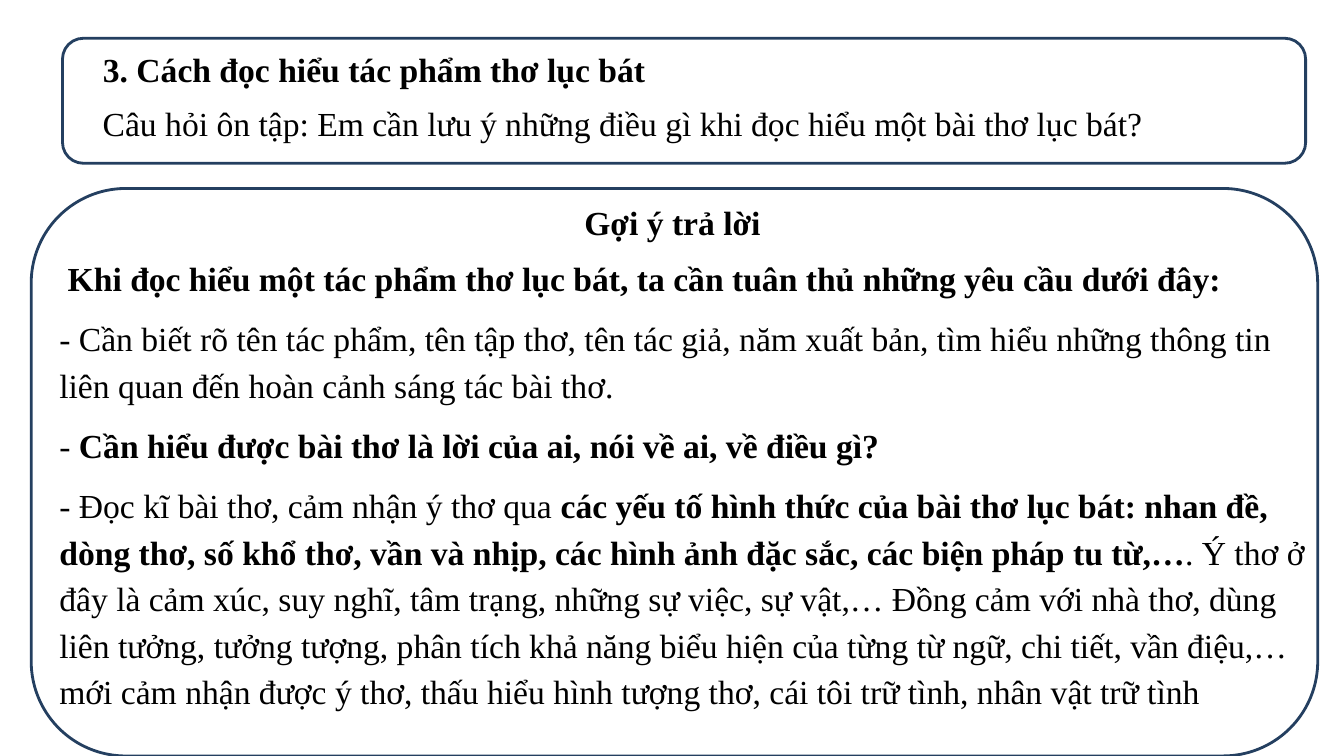
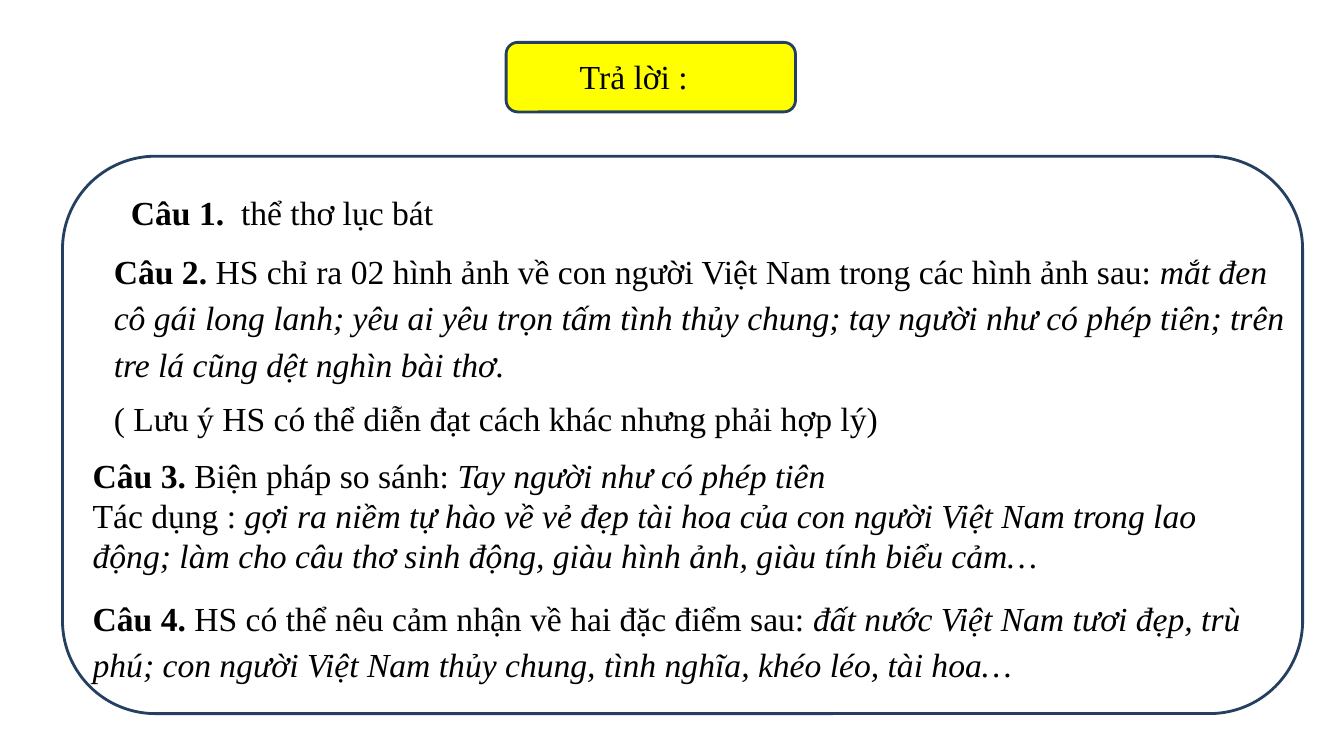
"""Build two review slides on reading six-eight verse."""
from dataclasses import dataclass

from pptx import Presentation
from pptx.dml.color import RGBColor
from pptx.enum.shapes import MSO_SHAPE
from pptx.enum.text import MSO_ANCHOR, MSO_AUTO_SIZE, PP_ALIGN
from pptx.util import Inches, Pt

ROUND = MSO_SHAPE.ROUNDED_RECTANGLE
TOP = MSO_ANCHOR.TOP
GROW = MSO_AUTO_SIZE.SHAPE_TO_FIT_TEXT
LEFT, MID, JUST = PP_ALIGN.LEFT, PP_ALIGN.CENTER, PP_ALIGN.JUSTIFY


@dataclass(frozen=True)
class Theme:
    ink: RGBColor = RGBColor(0, 0, 0)
    edge: RGBColor = RGBColor(0x24, 0x3F, 0x60)
    glow: RGBColor = RGBColor(0xFF, 0xFF, 0)
    face: str = "Times New Roman"
    size: Pt = Pt(24)
    line: Pt = Pt(2)
    wide: float = 1.15
    gap: Pt = Pt(10)


theme = Theme()


def panel(slide, at, fill=None):
    box = slide.shapes.add_shape(ROUND, *map(Inches, at))
    box.shadow.inherit = False
    box.line.color.rgb = theme.edge
    box.line.width = theme.line
    if fill is None:
        box.fill.background()
    else:
        box.fill.solid()
        box.fill.fore_color.rgb = fill


def write(shape, at, paras, align=LEFT, space=1.0, after=Pt(0)):
    shape.left, shape.top, shape.width, shape.height = map(Inches, at)
    frame = shape.text_frame
    frame.word_wrap = True
    frame.auto_size = GROW
    frame.vertical_anchor = TOP
    for num, runs in enumerate(paras):
        para = frame.add_paragraph() if num else frame.paragraphs[0]
        para.alignment = align
        para.line_spacing = space
        para.space_after = after
        font = para.font
        font.name, font.size = theme.face, theme.size
        font.color.rgb = theme.ink
        for style, text in runs:
            run = para.add_run()
            run.text = text
            if style == "b":
                run.font.bold = True
            elif style == "i":
                run.font.italic = True


deck = Presentation()
deck.slide_width, deck.slide_height = Inches(13.33), Inches(7.5)

pages = [
    {
        "panels": [((0.62, 0.38, 12.33, 1.24), None), ((0.31, 1.87, 12.76, 5.63), None)],
        "title": ((0.92, 0.38, 6.66, 0.53),
                  [[("b", "3. Cách đọc hiểu tác phẩm thơ lục bát")]], JUST, theme.wide),
        "texts": [
            ((0.92, 0.91, 11.32, 0.53),
             [[("", "Câu hỏi ôn tập: Em cần lưu ý những điều gì khi đọc hiểu một bài thơ lục bát?")]],
             JUST, theme.wide),
            ((3.33, 1.89, 6.68, 0.53), [[("b", "Gợi ý trả lời")]], MID, theme.wide),
            ((0.49, 2.45, 12.58, 4.66), [
                [("b", " Khi đọc hiểu một tác phẩm thơ lục bát, ta cần tuân thủ những yêu cầu dưới đây:")],
                [("", "- Cần biết rõ tên tác phẩm, tên tập thơ, tên tác giả, năm xuất bản, tìm hiểu "
                      "những thông tin liên quan đến hoàn cảnh sáng tác bài thơ.")],
                [("", "- "), ("b", "Cần hiểu được bài thơ là lời của ai, nói về ai, về điều gì?")],
                [("", "- Đọc kĩ bài thơ, cảm nhận ý thơ qua "),
                 ("b", "các yếu tố hình thức của bài thơ lục bát: nhan đề, dòng thơ, số khổ thơ, "
                       "vần và nhịp, các hình ảnh đặc sắc, các biện pháp tu từ,…"),
                 ("", ". Ý thơ ở đây là cảm xúc, suy nghĩ, tâm trạng, những sự việc, sự vật,… "
                      "Đồng cảm với nhà thơ, dùng liên tưởng, tưởng tượng, phân tích khả năng biểu hiện "
                      "của từng từ ngữ, chi tiết, vần điệu,… mới cảm nhận được ý thơ, thấu hiểu "
                      "hình tượng thơ, cái tôi trữ tình, nhân vật trữ tình")],
            ], LEFT, theme.wide, theme.gap),
        ],
    },
    {
        "panels": [((5.02, 0.42, 2.87, 0.69), theme.glow), ((0.62, 1.55, 12.3, 5.53), None)],
        "title": ((5.65, 0.5, 2.03, 0.51), [[("", "Trả lời :")]]),
        "texts": [
            ((1.2, 1.85, 6.66, 0.5), [[("b", "Câu 1."), ("", "  thể thơ lục bát")]]),
            ((1.03, 2.38, 11.89, 1.59), [
                [("b", "Câu 2."),
                 ("", " HS chỉ ra 02 hình ảnh về con người Việt Nam trong các hình ảnh sau: "),
                 ("i", "mắt đen cô gái long lanh; yêu ai yêu trọn tấm tình thủy chung; "
                       "tay người như có phép tiên; trên tre lá cũng dệt nghìn bài thơ.")],
            ], LEFT, theme.wide, theme.gap),
            ((1.03, 3.9, 11.89, 0.5),
             [[("", "( Lưu ý HS có thể diễn đạt cách khác nhưng phải hợp lý)")]]),
            ((0.82, 4.46, 11.89, 1.31), [
                [("b", "Câu 3."), ("", " Biện pháp so sánh: "), ("i", "Tay người như có phép tiên")],
                [("", "Tác dụng : "),
                 ("i", "gợi ra niềm tự hào về vẻ đẹp tài hoa của con người Việt Nam trong lao động; "
                       "làm cho câu thơ sinh động, giàu hình ảnh, giàu tính biểu cảm…")],
            ]),
            ((0.82, 5.82, 11.69, 1.01), [
                [("b", "Câu 4."), ("", " HS có thể nêu cảm nhận về hai đặc điểm sau: "),
                 ("i", "đất nước Việt Nam tươi đẹp, trù phú; con người Việt Nam thủy chung, "
                       "tình nghĩa, khéo léo, tài hoa…")],
            ], LEFT, theme.wide, theme.gap),
        ],
    },
]

for page in pages:
    slide = deck.slides.add_slide(deck.slide_layouts[5])
    title = slide.shapes.title
    for at, fill in page["panels"]:
        panel(slide, at, fill)
    title.element.getparent().append(title.element)
    write(title, *page["title"])
    for at, *rest in page["texts"]:
        write(slide.shapes.add_textbox(*map(Inches, at)), at, *rest)

deck.save("out.pptx")
